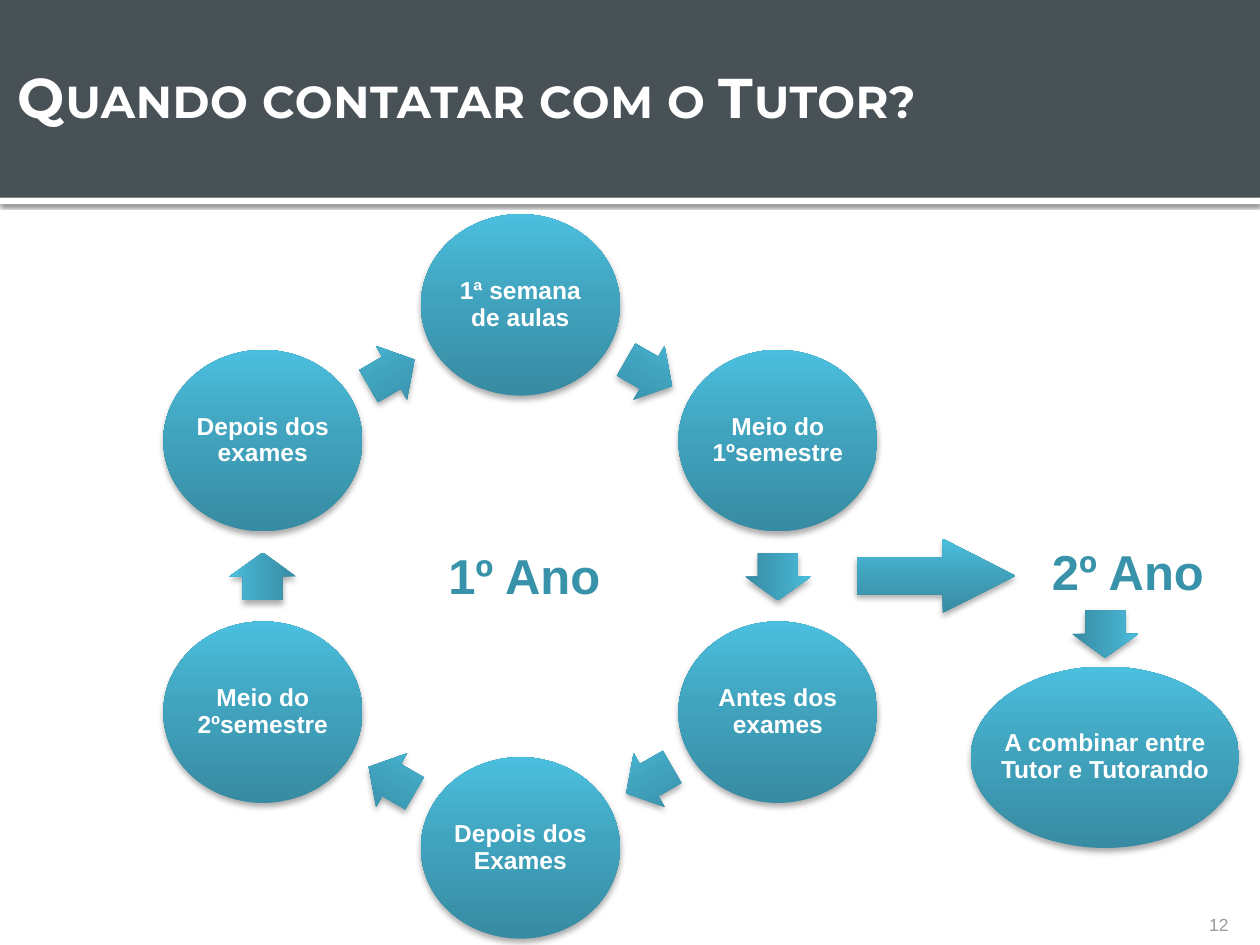
from dataclasses import dataclass
from math import cos, radians, sin

from lxml.etree import SubElement
from pptx import Presentation
from pptx.dml.color import RGBColor
from pptx.enum.shapes import MSO_SHAPE
from pptx.enum.text import MSO_ANCHOR, MSO_AUTO_SIZE, PP_ALIGN
from pptx.oxml.ns import qn
from pptx.util import Inches, Pt


@dataclass(frozen=True)
class Theme:
    """Colours, fonts and type sizes of the slide."""
    white: str = "FFFFFF"
    band: str = "485156"
    year: str = "3792AA"
    muted: str = "9B9A98"
    gradient: tuple = ((0, "378BA2"), (55, "41A4BF"), (100, "4BBFDE"))
    head_font: str = "Montserrat"
    body_font: str = "Arial"
    title_size: int = 32
    year_size: int = 28
    step_size: int = 14
    number_size: int = 10


T = Theme()
W, H = 10, 7.5
CX, CY, RX, RY = 4.13, 4.575, 2.36, 2.155
STEP_W, STEP_H, INSET = 1.58, 1.44, 0.23
SLANTED, UPRIGHT = (0.42, 0.49), (0.38, 0.53)
ARROW_ADJ = (0.6, 0.5)
STEPS = ("1ª semana de aulas", "Meio do 1ºsemestre", "Antes dos exames",
         "Depois dos Exames", "Meio do 2ºsemestre", "Depois dos exames")
RIGHT, LEFT = MSO_SHAPE.RIGHT_ARROW, MSO_SHAPE.LEFT_ARROW
ARROWS = ((RIGHT, SLANTED, 30), (RIGHT, UPRIGHT, 90), (LEFT, SLANTED, 330),
          (LEFT, SLANTED, 30), (RIGHT, UPRIGHT, 270), (RIGHT, SLANTED, 330))


def style(p, size, color, font=T.body_font, bold=True, align=PP_ALIGN.LEFT):
    """Format a whole paragraph."""
    p.alignment = align
    p.font.size, p.font.bold, p.font.name = Pt(size), bold, font
    p.font.color.rgb = RGBColor.from_string(color)


def set_margins(tf, left, top, right, bottom):
    """Set the four text margins in inches."""
    tf.margin_left, tf.margin_top = Inches(left), Inches(top)
    tf.margin_right, tf.margin_bottom = Inches(right), Inches(bottom)


def add_shadow(sp, alpha, blur, dist):
    """Give a shape a black shadow that falls straight down."""
    sp.shadow.inherit = False
    effects = sp.element.spPr.find(qn("a:effectLst"))
    shadow = SubElement(effects, qn("a:outerShdw"), blurRad=str(Pt(blur)),
                        dist=str(Pt(dist)), dir="5400000", rotWithShape="0")
    color = SubElement(shadow, qn("a:srgbClr"), val="000000")
    SubElement(color, qn("a:alpha"), val=str(alpha * 1000))


def add_glossy(s, kind, cx, cy, w, h, rotation=0):
    """Add a centred shape with the gradient and the soft shadow."""
    sp = s.shapes.add_shape(kind, Inches(cx - w / 2), Inches(cy - h / 2),
                            Inches(w), Inches(h))
    sp.rotation = rotation
    sp.fill.gradient()
    sp.fill.gradient_angle = 90
    stops = sp.element.spPr.find(".//" + qn("a:gsLst"))
    for stop in list(stops):
        stops.remove(stop)
    for pos, color in T.gradient:
        stop = SubElement(stops, qn("a:gs"), pos=str(pos * 1000))
        SubElement(stop, qn("a:srgbClr"), val=color)
    sp.line.fill.background()
    add_shadow(sp, 32, 3.5, 2.2)
    return sp


def add_step(s, text, cx, cy, w=STEP_W):
    """Add an oval whose text margins count from its bounding box."""
    sp = add_glossy(s, MSO_SHAPE.OVAL, cx, cy, w, STEP_H)
    tf = sp.text_frame
    tf.word_wrap, tf.vertical_anchor = True, MSO_ANCHOR.MIDDLE
    dx, dy = (INSET - side * (1 - cos(radians(45))) / 2 for side in (w, STEP_H))
    set_margins(tf, dx, dy, dx, dy)
    p = tf.paragraphs[0]
    p.text = text
    p.line_spacing, p.space_after = 0.9, Pt(7)
    style(p, T.step_size, T.white, align=PP_ALIGN.CENTER)


def add_arrow(s, kind, cx, cy, size, rotation=0, adj=ARROW_ADJ):
    """Add a block arrow with its shaft and head proportions."""
    sp = add_glossy(s, kind, cx, cy, *size, rotation)
    sp.adjustments[0], sp.adjustments[1] = adj


def add_cycle(s):
    """Place the steps on an ellipse, with an arrow midway to each next step."""
    angles = [radians(360 / len(STEPS) * i) for i in range(len(STEPS))]
    points = [(CX + RX * sin(a), CY - RY * cos(a)) for a in angles]
    following = points[1:] + points[:1]
    for text, (x, y), (nx, ny), arrow in zip(STEPS, points, following, ARROWS):
        kind, size, rotation = arrow
        add_step(s, text, x, y)
        add_arrow(s, kind, (x + nx) / 2, (y + ny) / 2, size, rotation)


def add_text(s, text, x, y, w, h):
    """Add a one-paragraph text box and return its frame and paragraph."""
    tf = s.shapes.add_textbox(Inches(x), Inches(y), Inches(w), Inches(h)).text_frame
    tf.word_wrap = True
    p = tf.paragraphs[0]
    p.text = text
    return tf, p


def add_year(s, text, x, y):
    """Add a large year label."""
    _, p = add_text(s, text, x, y, 1.54, 0.57)
    style(p, T.year_size, T.year)


def add_number(s, text):
    """Add the slide number at the lower right."""
    tf, p = add_text(s, text, 8.92, 7.02, 0.83, 0.4)
    tf.vertical_anchor = MSO_ANCHOR.BOTTOM
    set_margins(tf, 0, 0, 0, 0)
    style(p, T.number_size, T.muted, bold=False, align=PP_ALIGN.RIGHT)


def add_band(s, y, h, color):
    """Add a full-width band behind the title."""
    sp = s.shapes.add_shape(MSO_SHAPE.RECTANGLE, 0, Inches(y), Inches(W), Inches(h))
    sp.fill.solid()
    sp.fill.fore_color.rgb = RGBColor.from_string(color)
    sp.line.fill.background()
    sp.shadow.inherit = False
    s.shapes.title.element.addprevious(sp.element)
    return sp


def set_title(s, text):
    """Fill, move and format the title placeholder."""
    sp = s.shapes.title
    sp.left, sp.top = Inches(0.04), Inches(0.29)
    sp.width, sp.height = Inches(9.61), Inches(0.95)
    tf = sp.text_frame
    tf.auto_size, tf.vertical_anchor = MSO_AUTO_SIZE.NONE, MSO_ANCHOR.MIDDLE
    set_margins(tf, 0.1, 0.05, 0.05, 0.05)
    p = tf.paragraphs[0]
    r = p.add_run()
    r.text = text
    style(p, T.title_size, T.white, T.head_font)
    props = r.font._element if hasattr(r.font, "_element") else r._r.get_or_add_rPr()
    props.set("cap", "small")
    props.set("spc", "40")


def main():
    """Build and save the slide."""
    prs = Presentation()
    prs.slide_width, prs.slide_height = Inches(W), Inches(H)
    s = prs.slides.add_slide(prs.slide_layouts[5])
    add_shadow(add_band(s, 1.57, 0.05, T.white), 60, 2.5, 0.8)
    add_band(s, 0, 1.57, T.band)
    set_title(s, "Quando contatar com o Tutor?")
    add_number(s, "12")
    add_cycle(s)
    add_arrow(s, RIGHT, 7.43, 4.57, (1.26, 0.59), adj=(0.5, 0.98))
    add_year(s, "2º Ano", 8.25, 4.25)
    add_year(s, "1º Ano", 3.46, 4.28)
    add_step(s, "A combinar entre Tutor e Tutorando", 8.77, 6.01, 2.13)
    add_arrow(s, RIGHT, 8.77, 5.03, UPRIGHT, 90)
    prs.save("out.pptx")


if __name__ == "__main__":
    main()
